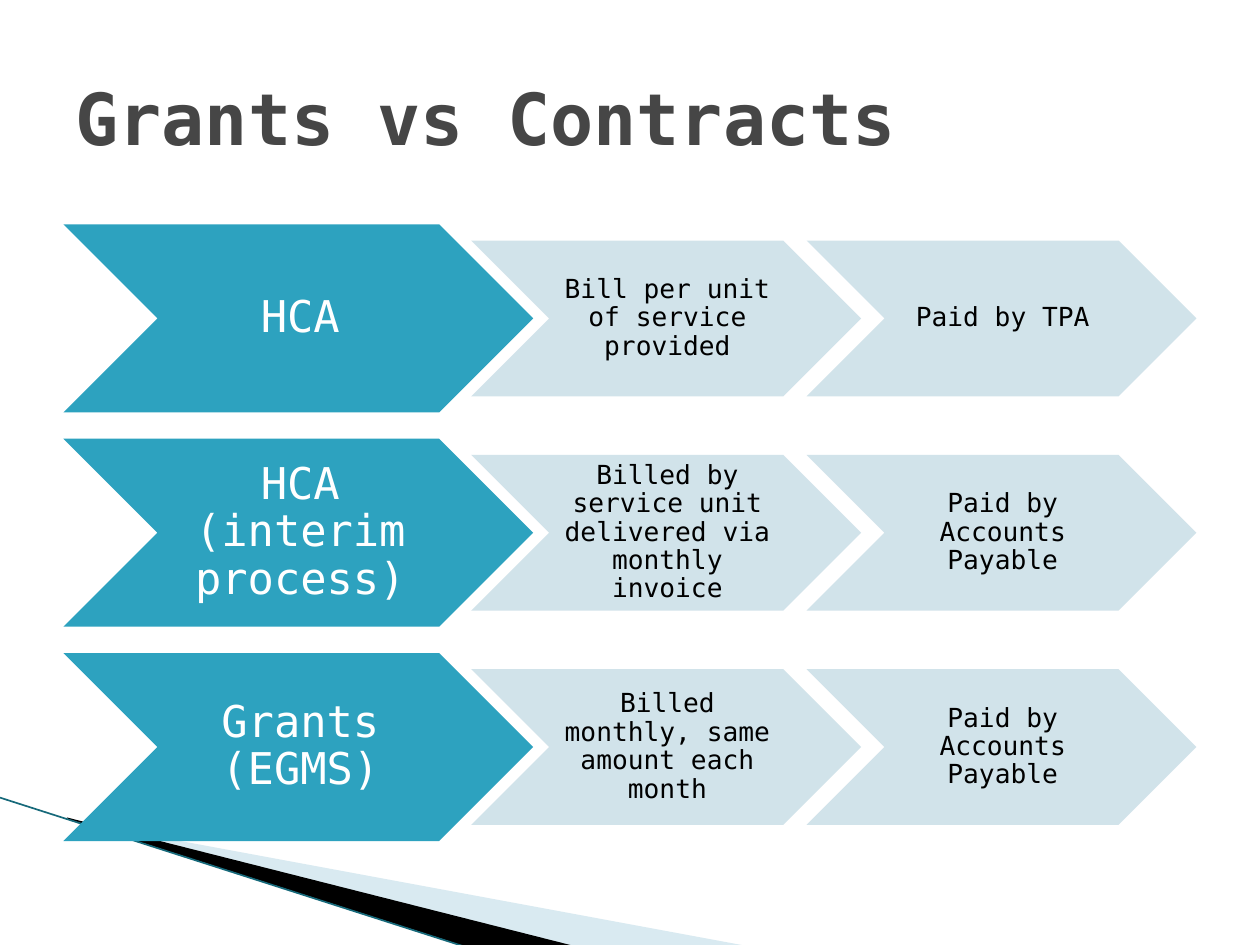
import pptx
import pptx.dml.color
import pptx.enum.shapes
import pptx.enum.text
import pptx.oxml
import pptx.oxml.ns
import pptx.util

Cm = pptx.util.Cm
FONT = "DejaVu Sans Mono"
TITLE = "Grants vs Contracts"
PROCESSES = [
    ("HCA", "Bill per unit of service provided", "Paid by TPA"),
    ("HCA (interim process)",
     "Billed by service unit delivered via monthly invoice",
     "Paid by Accounts Payable"),
    ("Grants (EGMS)", "Billed monthly, same amount each month",
     "Paid by Accounts Payable"),
]
# Corner points in cm, fill colour, opacity in percent
WEDGES = [
    ([(1.4, 16.54), (15.11, 19.08), (11.58, 19.08), (1.4, 16.51)], "A0CBDC", 40),
    ([(1.35, 16.48), (11.61, 19.08), (9.45, 19.1), (1.37, 16.51)], "000000", 100),
]
EDGE = (0, 16.08, 9.42, 19.1)

# Sizes in cm
NAME_STYLE = dict(width=9.47, height=3.79, fill="2DA2BF", opacity=100,
                  size=25, color="FFFFFF", inset=0.08)
STEP_STYLE = dict(width=7.86, height=3.14, fill="CDE0E8", opacity=90,
                  size=15, color="000000", inset=0.05)
NAME_LEFT, STEP_LEFT, STEP_PITCH = 1.28, 9.5, 6.76
FIRST_MIDDLE, ROW_PITCH = 6.42, 4.32


def rgb(value):
    return pptx.dml.color.RGBColor.from_string(value)


def paint(shape, color, opacity):
    """Fill a shape with no outline and no shadow."""
    shape.shadow.inherit = False
    shape.line.fill.background()
    shape.fill.solid()
    shape.fill.fore_color.rgb = rgb(color)
    if opacity < 100:
        tint = shape._element.spPr.find(".//" + pptx.oxml.ns.qn("a:srgbClr"))
        alpha = pptx.oxml.parse_xml(
            f'<a:alpha {pptx.oxml.ns.nsdecls("a")} val="{opacity * 1000}"/>')
        tint.append(alpha)


def write(shape, words, size, color, frame_format, paragraph_format, bold=False):
    frame = shape.text_frame
    frame.text = words
    paragraph = frame.paragraphs[0]
    font_format = dict(name=FONT, size=pptx.util.Pt(size), bold=bold)
    for target, values in ((frame, frame_format), (paragraph, paragraph_format),
                           (paragraph.font, font_format)):
        for key, value in values.items():
            setattr(target, key, value)
    paragraph.font.color.rgb = rgb(color)


def add_chevron(slide, words, left, middle, style):
    height = style["height"]
    chevron = slide.shapes.add_shape(
        pptx.enum.shapes.MSO_SHAPE.CHEVRON, Cm(left), Cm(middle - height / 2),
        Cm(style["width"]), Cm(height))
    paint(chevron, style["fill"], style["opacity"])
    inset = Cm(style["inset"])
    write(chevron, words, style["size"], style["color"],
          dict(word_wrap=True, vertical_anchor=pptx.enum.text.MSO_ANCHOR.MIDDLE,
               margin_left=inset, margin_right=0,
               margin_top=inset // 2, margin_bottom=inset // 2),
          dict(alignment=pptx.enum.text.PP_ALIGN.CENTER, line_spacing=0.9))


def add_backdrop(slide):
    for points, color, opacity in WEDGES:
        corners = [(Cm(x), Cm(y)) for x, y in points]
        builder = slide.shapes.build_freeform(*corners[0])
        builder.add_line_segments(corners[1:], close=True)
        paint(builder.convert_to_shape(), color, opacity)
    edge = slide.shapes.add_connector(
        pptx.enum.shapes.MSO_CONNECTOR.STRAIGHT, *map(Cm, EDGE))
    edge.line.color.rgb = rgb("16697A")
    edge.line.width = pptx.util.Pt(0.95)
    edge._element.spPr.append(pptx.oxml.parse_xml(
        f'<a:effectLst {pptx.oxml.ns.nsdecls("a")}/>'))


def main():
    deck = pptx.Presentation()
    deck.slide_width, deck.slide_height = Cm(25.4), Cm(19.05)
    slide = deck.slides.add_slide(deck.slide_layouts[6])
    add_backdrop(slide)

    title = slide.shapes.add_textbox(Cm(1.27), Cm(0.76), Cm(22.86), Cm(3.18))
    write(title, TITLE, 41, "464646",
          dict(word_wrap=True, vertical_anchor=pptx.enum.text.MSO_ANCHOR.MIDDLE),
          dict(alignment=pptx.enum.text.PP_ALIGN.LEFT), bold=True)

    for row, (name, *steps) in enumerate(PROCESSES):
        middle = FIRST_MIDDLE + row * ROW_PITCH
        add_chevron(slide, name, NAME_LEFT, middle, NAME_STYLE)
        for column, step in enumerate(steps):
            add_chevron(slide, step, STEP_LEFT + column * STEP_PITCH, middle,
                        STEP_STYLE)
    deck.save("out.pptx")


if __name__ == "__main__":
    main()
